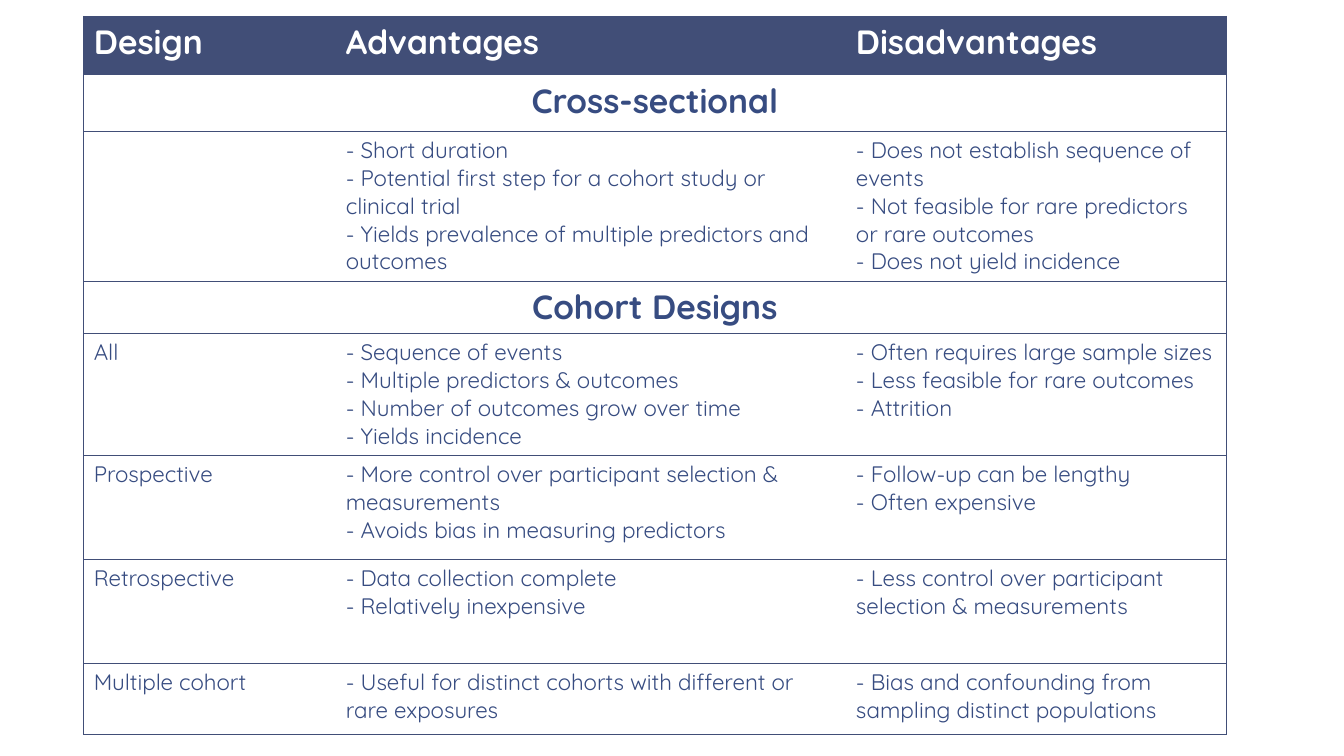
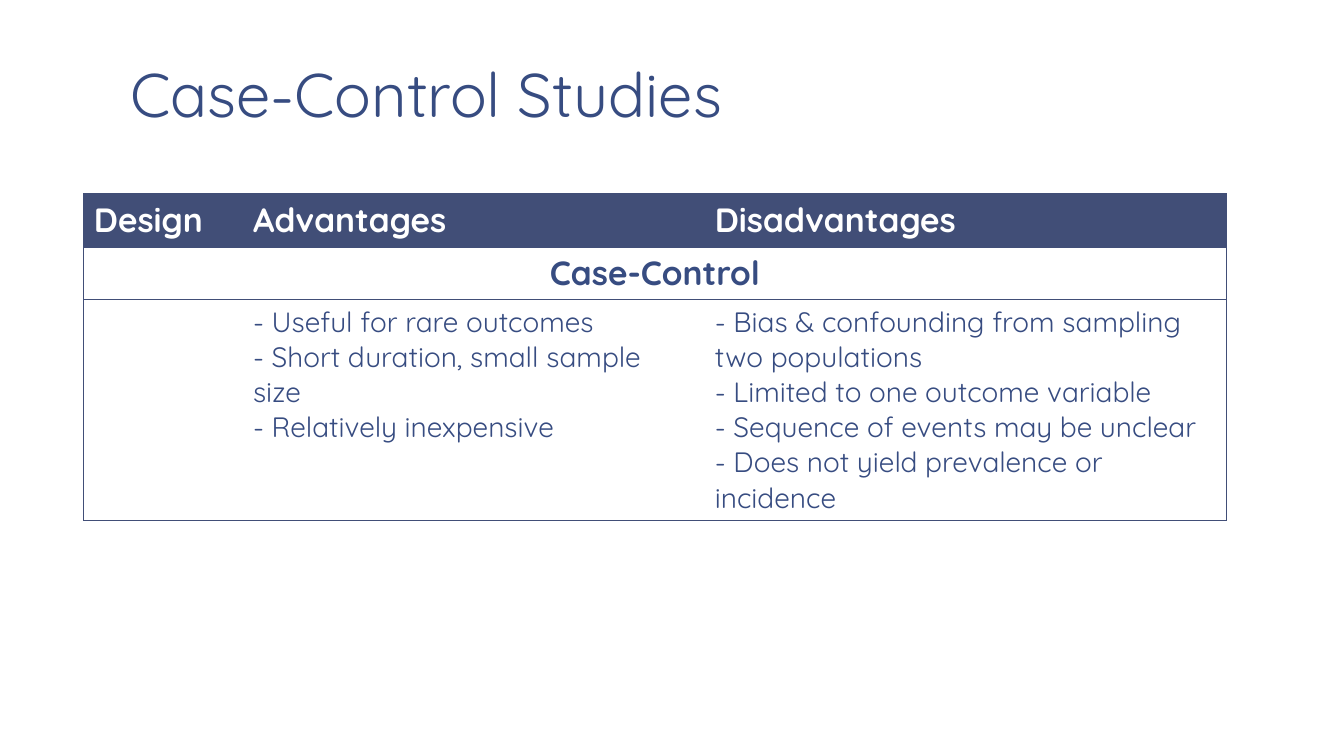
from lxml import etree
from pptx import Presentation
from pptx.dml.color import RGBColor
from pptx.enum.text import MSO_ANCHOR, PP_ALIGN
from pptx.oxml.ns import qn
from pptx.util import Inches, Pt

HEADER_FILL = RGBColor(0x41, 0x4E, 0x77)
BORDER = RGBColor(0x41, 0x4E, 0x77)
TEXT = RGBColor(0x37, 0x4C, 0x81)
WHITE = RGBColor(0xFF, 0xFF, 0xFF)
FONT = "Quicksand"

SLIDE_WIDTH, SLIDE_HEIGHT = Inches(13.33), Inches(7.5)
TABLE_LEFT = Inches(0.83)
BORDER_WIDTH = Pt(0.5)
HEADING_SIZE = 24

HEADINGS = ["Design", "Advantages", "Disadvantages"]

# A row with one string is a section band; otherwise (design, advantages, disadvantages).
COHORT_ROWS = [
    "Cross-sectional",
    ("",
     ["Short duration",
      "Potential first step for a cohort study or clinical trial",
      "Yields prevalence of multiple predictors and outcomes"],
     ["Does not establish sequence of events",
      "Not feasible for rare predictors or rare outcomes",
      "Does not yield incidence"]),
    "Cohort Designs",
    ("All",
     ["Sequence of events",
      "Multiple predictors & outcomes",
      "Number of outcomes grow over time",
      "Yields incidence"],
     ["Often requires large sample sizes",
      "Less feasible for rare outcomes",
      "Attrition"]),
    ("Prospective",
     ["More control over participant selection & measurements",
      "Avoids bias in measuring predictors"],
     ["Follow-up can be lengthy",
      "Often expensive"]),
    ("Retrospective",
     ["Data collection complete",
      "Relatively inexpensive"],
     ["Less control over participant selection & measurements"]),
    ("Multiple cohort",
     ["Useful for distinct cohorts with different or rare exposures"],
     ["Bias and confounding from sampling distinct populations"]),
]

CASE_CONTROL_ROWS = [
    "Case-Control",
    ("",
     ["Useful for rare outcomes",
      "Short duration, small sample size",
      "Relatively inexpensive"],
     ["Bias & confounding from sampling two populations",
      "Limited to one outcome variable",
      "Sequence of events may be unclear",
      "Does not yield prevalence or incidence"]),
]


def write_text(text_frame, lines, size, color=TEXT, bold=False,
               align=PP_ALIGN.LEFT, line_spacing=None):
    """Write each line as one paragraph of the frame."""
    for index, line in enumerate(lines):
        paragraph = text_frame.paragraphs[0] if index == 0 else text_frame.add_paragraph()
        paragraph.alignment = align
        if line_spacing:
            paragraph.line_spacing = line_spacing
        run = paragraph.add_run()
        run.text = line
        font = run.font
        font.name, font.size, font.bold = FONT, Pt(size), bold
        font.color.rgb = color


def set_borders(cell, visible_sides):
    """Draw the named sides (from L, R, T, B) and clear the others."""
    properties = cell._tc.get_or_add_tcPr()
    for side in "LRTB":
        line = etree.SubElement(properties, qn(f"a:ln{side}"), w=str(BORDER_WIDTH))
        if side in visible_sides:
            fill = etree.SubElement(line, qn("a:solidFill"))
            etree.SubElement(fill, qn("a:srgbClr"), val=str(BORDER))
        else:
            etree.SubElement(line, qn("a:noFill"))


def style_row(cells, fill_color=None):
    """Frame the row as one box without inner verticals."""
    last = len(cells) - 1
    for column, cell in enumerate(cells):
        outer = ("L" if column == 0 else "") + ("R" if column == last else "")
        set_borders(cell, "LRTB" if cell.is_merge_origin else "TB" + outer)
        if fill_color is None:
            cell.fill.background()
        else:
            cell.fill.solid()
            cell.fill.fore_color.rgb = fill_color


def add_design_table(slide, top, column_widths, row_heights, rows, body_size):
    frame = slide.shapes.add_table(
        len(rows) + 1, len(HEADINGS), TABLE_LEFT, Inches(top),
        Inches(sum(column_widths)), Inches(sum(row_heights)))
    table = frame.table
    table.horz_banding = False
    for column, width in zip(table.columns, column_widths):
        column.width = Inches(width)
    for row, height in zip(table.rows, row_heights):
        row.height = Inches(height)

    header, *body = [list(row.cells) for row in table.rows]
    style_row(header, HEADER_FILL)
    for cell, heading in zip(header, HEADINGS):
        write_text(cell.text_frame, [heading], HEADING_SIZE, color=WHITE, bold=True)

    for cells, content in zip(body, rows):
        if isinstance(content, str):
            cells[0].merge(cells[-1])
            write_text(cells[0].text_frame, [content], HEADING_SIZE,
                       bold=True, align=PP_ALIGN.CENTER)
        else:
            design, *points = content
            if design:
                write_text(cells[0].text_frame, [design], body_size)
            for cell, items in zip(cells[1:], points):
                write_text(cell.text_frame, [f"- {item}" for item in items], body_size)
        style_row(cells)


def set_title(slide, text):
    title = slide.shapes.title
    title.left, title.top = Inches(1.16), Inches(-0.17)
    title.width, title.height = Inches(11.11), Inches(1.53)
    frame = title.text_frame
    frame.word_wrap = True
    frame.vertical_anchor = MSO_ANCHOR.BOTTOM
    frame.margin_left = frame.margin_right = Inches(0.13)
    frame.margin_top = frame.margin_bottom = Inches(0.07)
    write_text(frame, [text], 44, line_spacing=0.85)


def main():
    presentation = Presentation()
    presentation.slide_width, presentation.slide_height = SLIDE_WIDTH, SLIDE_HEIGHT
    title_only, blank = presentation.slide_layouts[5], presentation.slide_layouts[6]

    cohort_slide = presentation.slides.add_slide(blank)
    add_design_table(cohort_slide, 0.16, [2.5, 5.06, 3.77],
                     [0.58, 0.56, 1.49, 0.52, 1.21, 1.03, 1.03, 0.71],
                     COHORT_ROWS, body_size=16)

    case_control_slide = presentation.slides.add_slide(title_only)
    set_title(case_control_slide, "Case-Control Studies")
    add_design_table(case_control_slide, 1.92, [1.58, 4.58, 5.17],
                     [0.53, 0.52, 2.19], CASE_CONTROL_ROWS, body_size=20)

    presentation.save("out.pptx")


if __name__ == "__main__":
    main()
